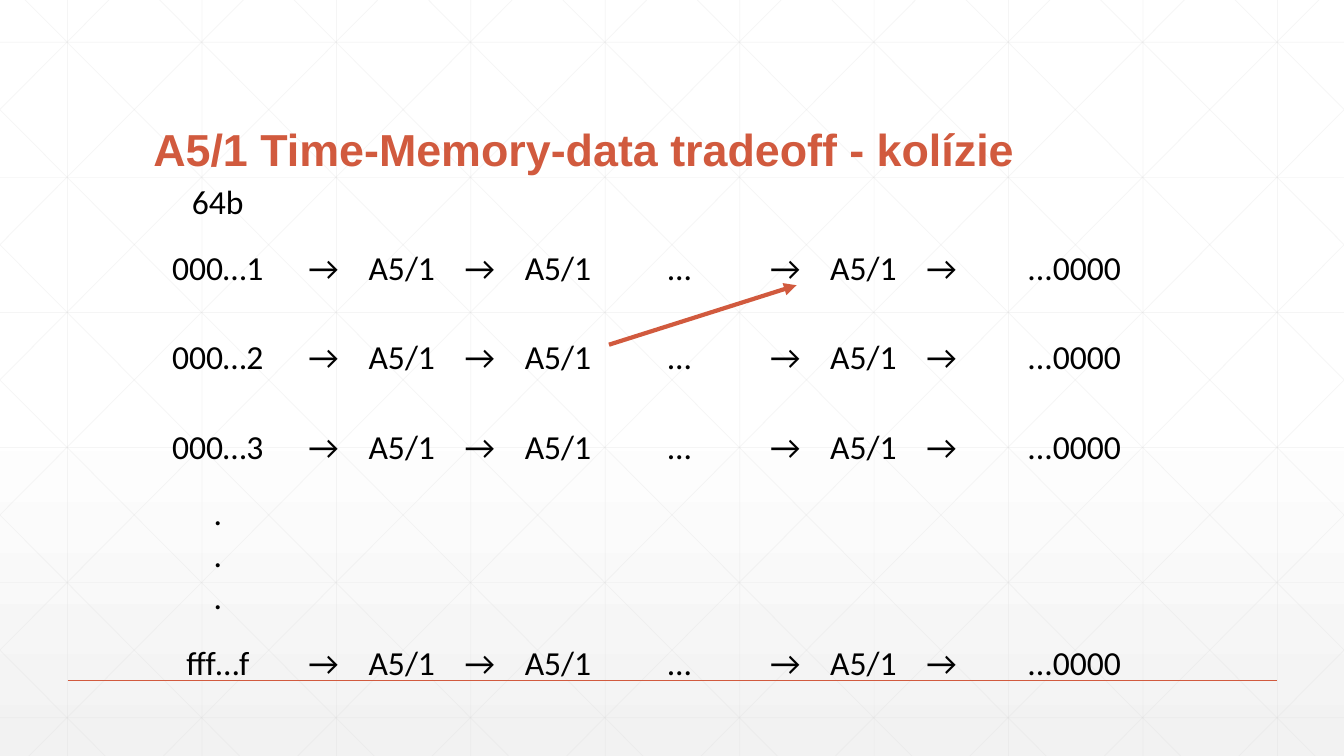
from lxml import etree
from pptx import Presentation
from pptx import util as u
from pptx.dml.color import RGBColor
from pptx.enum import shapes, text
from pptx.oxml.ns import qn

WIDTH, HEIGHT = 13.33, 7.5
ACCENT, GRID, BLACK = "D15A3E", "D9D9D9", "000000"
NO_STYLE = "{2D5ABB26-0587-4C30-8999-92F81FD0307C}"
GRID_STEP = 4 / 3
SLOPE = 7.5 / 7.46

COLUMNS = [1.48, 0.62, 0.93, 0.62, 0.93, 1.48, 0.62, 0.93, 0.62, 2.01]
ROWS = [0.3, 0.89, 0.89, 0.89, 0.3, 0.3, 0.3, 0.89]
STARTS = ["64b", "000…1", "000…2", "000…3", ".", ".", ".", "fff…f"]
CHAIN = ["→", "A5/1", "→", "A5/1", "...", "→", "A5/1", "→", "...0000"]


def color(value):
    return RGBColor.from_string(value)


def set_all(obj, values):
    for name, value in values.items():
        setattr(obj, name, value)


class SlideBuilder:
    def __init__(self, prs):
        self.s = prs.slides.add_slide(prs.slide_layouts[5])
        self.cell_font = dict(name="Calibri", size=u.Pt(24))
        self.title_font = dict(name="Arial", size=u.Pt(32), bold=True)
        self.cell_format = dict(
            margin_left=u.Inches(0.01), margin_right=u.Inches(0.01),
            margin_top=u.Inches(0.01), margin_bottom=0,
            vertical_anchor=text.MSO_ANCHOR.MIDDLE)

    def background(self):
        fill = self.s.background.fill
        fill.gradient()
        fill.gradient_angle = 270
        for stop, position, shade in zip(fill.gradient_stops, (0.53, 1), ("FFFFFF", "F2F2F2")):
            stop.position = position
            stop.color.rgb = color(shade)

    def line(self, start, end, shade, width, parent=None, alpha=None, arrow=False):
        """Draw a straight line; alpha is the opacity in percent."""
        points = [u.Inches(v) for v in (*start, *end)]
        c = (parent or self.s).shapes.add_connector(shapes.MSO_CONNECTOR.STRAIGHT, *points)
        c.line.width = u.Pt(width)
        c.line.color.rgb = color(shade)
        ln = c.line._get_or_add_ln()
        if alpha:
            rgb = ln.find(".//" + qn("a:srgbClr"))
            etree.SubElement(rgb, qn("a:alpha"), val=str(alpha * 1000))
        if arrow:
            etree.SubElement(ln, qn("a:tailEnd"), type="triangle")
        etree.SubElement(ln.getparent(), qn("a:effectLst"))

    def grid(self):
        """Draw the faint lattice of vertical, horizontal and diagonal lines."""
        lines = []
        for k in range(10):
            x = 0.67 + k * GRID_STEP
            lines.append(((x, 0), (x, HEIGHT)))
        for k in range(6):
            y = 0.42 + k * 1.34
            lines.append(((0, y), (WIDTH, y)))
        for k in range(-5, 10):
            x = 0.25 + k * GRID_STEP
            left, right = max(x, 0), min(x + HEIGHT / SLOPE, WIDTH)
            top, bottom = (left - x) * SLOPE, (right - x) * SLOPE
            lines.append(((left, top), (right, bottom)))
            lines.append(((WIDTH - left, top), (WIDTH - right, bottom)))
        group = self.s.shapes.add_group_shape()
        for start, end in lines:
            self.line(start, end, GRID, 0.5, group, alpha=25)

    def title(self, words):
        sp = self.s.shapes.title
        self.s.shapes.element.append(sp.element)  # in front of the lattice
        set_all(sp, dict(left=u.Inches(1.42), top=u.Inches(0.55),
                         width=u.Inches(10.5), height=u.Inches(1.25)))
        tf = sp.text_frame
        set_all(tf, dict(text=words, word_wrap=True, auto_size=text.MSO_AUTO_SIZE.NONE,
                         vertical_anchor=text.MSO_ANCHOR.BOTTOM))
        p = tf.paragraphs[0]
        set_all(p, dict(alignment=text.PP_ALIGN.LEFT, line_spacing=0.9))
        set_all(p.runs[0].font, self.title_font)
        p.runs[0].font.color.rgb = color(ACCENT)

    def table(self, left, top, columns, rows, values):
        frame = self.s.shapes.add_table(
            len(rows), len(columns), u.Inches(left), u.Inches(top),
            u.Inches(sum(columns)), u.Inches(sum(rows)))
        table = frame.table
        set_all(table, dict(first_row=False, horz_banding=False))
        frame.element.find(".//" + qn("a:tableStyleId")).text = NO_STYLE
        for column, width in zip(table.columns, columns):
            column.width = u.Inches(width)
        for row, height, words in zip(table.rows, rows, values):
            row.height = u.Inches(height)
            for cell, word in zip(row.cells, words):
                self.fill_cell(cell, word)

    def fill_cell(self, cell, word):
        set_all(cell, self.cell_format)
        cell.fill.background()
        if word:
            p = cell.text_frame.paragraphs[0]
            p.alignment = text.PP_ALIGN.CENTER
            r = p.add_run()
            r.text = word
            set_all(r.font, self.cell_font)
            r.font.color.rgb = color(BLACK)


def main():
    prs = Presentation()
    set_all(prs, dict(slide_width=u.Inches(WIDTH), slide_height=u.Inches(HEIGHT)))
    slide = SlideBuilder(prs)
    slide.background()
    slide.grid()
    slide.line((0.67, 6.75), (12.67, 6.75), ACCENT, 1)
    slide.title("A5/1 Time-Memory-data tradeoff - kolízie")
    values = [[start] + (CHAIN if "…" in start else [""] * len(CHAIN)) for start in STARTS]
    slide.table(1.42, 1.8, COLUMNS, ROWS, values)
    slide.line((6.04, 3.42), (7.9, 2.83), ACCENT, 3, arrow=True)
    prs.save("out.pptx")


if __name__ == "__main__":
    main()
